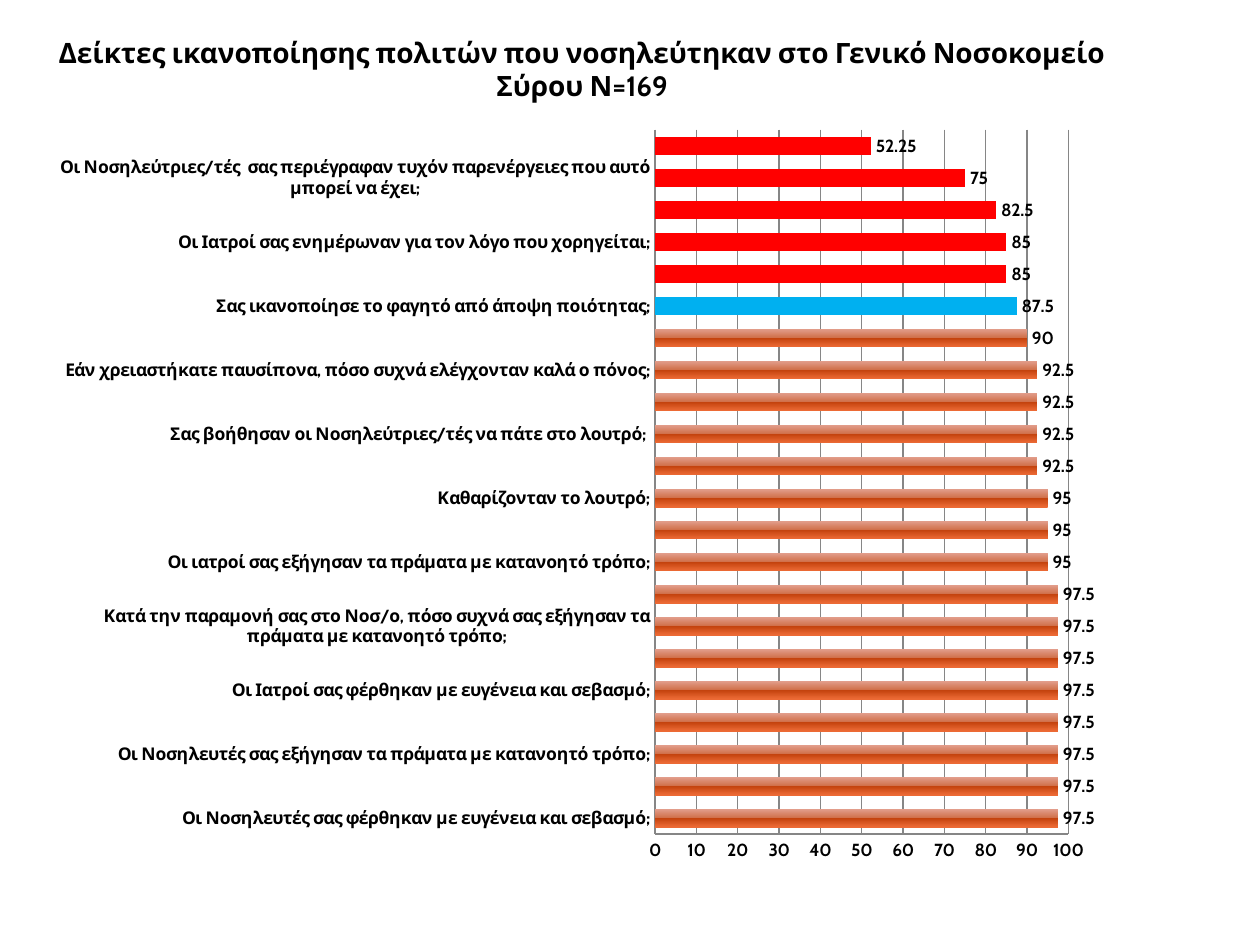
from lxml.etree import SubElement
from pptx import Presentation
from pptx.chart.data import CategoryChartData
from pptx.dml.color import RGBColor
from pptx.enum.chart import XL_CHART_TYPE, XL_LABEL_POSITION, XL_TICK_MARK
from pptx.enum.text import MSO_AUTO_SIZE, PP_ALIGN
from pptx.oxml.ns import qn
from pptx.util import Inches, Pt

FONT = "Cabin"
BLACK = RGBColor(0x00, 0x00, 0x00)
GRAY = RGBColor(0x86, 0x86, 0x86)
RED = RGBColor(0xFF, 0x00, 0x00)
BLUE = RGBColor(0x00, 0xB0, 0xF0)
ORANGE_STOPS = (
    (0, RGBColor(0xE3, 0xA0, 0x8F)),
    (50, RGBColor(0xD0, 0x70, 0x4A)),
    (50, RGBColor(0xC2, 0x41, 0x0C)),
    (100, RGBColor(0xEC, 0x6A, 0x35)),
)

TITLE = "Δείκτες ικανοποίησης πολιτών που νοσηλεύτηκαν στο Γενικό Νοσοκομείο Σύρου Ν=169"
TITLE_BOX = (0.23, 0.23, 8.78, 0.64)
CHART_BOX = (0.31, 0.92, 8.47, 6.04)
PLOT_BOX = (5.2, 1.03, 3.28, 5.59)
BLUE_LIMIT, RED_LIMIT = 87.5, 85

SATISFACTION = (
    ("Οι Νοσηλευτές σας φέρθηκαν με ευγένεια και σεβασμό;", 97.5),
    ("Οι Νοσηλευτές σας άκουσαν με προσοχή;", 97.5),
    ("Οι Νοσηλευτές σας εξήγησαν τα πράματα με κατανοητό τρόπο;", 97.5),
    ("Αφού είχατε πατήσει το κουμπί κλήσης για βοήθεια, πόσο συχνά λάβατε βοήθεια έγκαιρα;", 97.5),
    ("Οι Ιατροί σας φέρθηκαν με ευγένεια και σεβασμό;", 97.5),
    ("Οι Ιατροί σας άκουσαν με προσοχή;", 97.5),
    ("Κατά την παραμονή σας στο Νοσ/ο, πόσο συχνά σας εξήγησαν τα πράματα με κατανοητό τρόπο;", 97.5),
    ("Το προσωπικό έκανε ότι μπορούσε προκειμένου να σας βοηθήσει στην αντιμετώπιση του πόνου;", 97.5),
    ("Οι ιατροί σας εξήγησαν τα πράματα με κατανοητό τρόπο;", 95),
    ("Καθαρίζονταν το δωμάτιο νοσηλείας;", 95),
    ("Καθαρίζονταν το λουτρό;", 95),
    ("Σας ικανοποίησε το φαγητό από άποψη ποσότητας;", 92.5),
    ("Σας βοήθησαν οι Νοσηλεύτριες/τές να πάτε στο λουτρό; ", 92.5),
    ("Οι Νοσηλεύτριες/τές  ήταν πρόθυμες να σας βοηθήσουν να χρησιμοποιήσετε το ουροδοχείο;", 92.5),
    ("Εάν χρειαστήκατε παυσίπονα, πόσο συχνά ελέγχονταν καλά ο πόνος;", 92.5),
    ("Υπήρχε ησυχία τη νύχτα γύρω από το δωμάτιό σας;", 90),
    ("Σας ικανοποίησε το φαγητό από άποψη ποιότητας;", 87.5),
    ("Οι Νοσηλευτές/τριες σας ενημέρωναν για τον λόγο που χορηγείται;", 85),
    ("Οι Ιατροί σας ενημέρωναν για τον λόγο που χορηγείται;", 85),
    ("Σας ικανοποίησε η ποικιλία του μενού;", 82.5),
    ("Οι Νοσηλεύτριες/τές  σας περιέγραφαν τυχόν παρενέργειες που αυτό μπορεί να έχει;", 75),
    ("Οι Ιατροί σας περιέγραφαν τυχόν παρενέργειες που αυτό μπορεί να έχει;", 52.25),
)


def style_font(font, size):
    """Apply the bold black slide font."""
    font.name, font.size, font.bold = FONT, Pt(size), True
    font.color.rgb = BLACK


def add_title(slide):
    """Add the centred heading."""
    frame = slide.shapes.add_textbox(*map(Inches, TITLE_BOX)).text_frame
    frame.word_wrap = True
    frame.auto_size = MSO_AUTO_SIZE.SHAPE_TO_FIT_TEXT
    frame.text = TITLE
    heading = frame.paragraphs[0]
    heading.alignment = PP_ALIGN.CENTER
    style_font(heading.runs[0].font, 16)


def place_plot(chart):
    """Fix the inner plot area at PLOT_BOX within the chart."""
    plot_area = chart.plots[0]._element.getparent()
    layout = plot_area.find(qn("c:layout"))
    if layout is None:
        layout = SubElement(plot_area, qn("c:layout"))
        plot_area.insert(0, layout)
    manual = SubElement(layout, qn("c:manualLayout"))
    left, top, width, height = CHART_BOX
    x, y, plot_width, plot_height = PLOT_BOX
    settings = (
        ("layoutTarget", "inner"), ("xMode", "edge"), ("yMode", "edge"),
        ("x", (x - left) / width), ("y", (y - top) / height),
        ("w", plot_width / width), ("h", plot_height / height),
    )
    for tag, value in settings:
        SubElement(manual, qn(f"c:{tag}")).set("val", str(value))


def fill_glossy(fill, series):
    """Fill the bars with the glossy orange gradient, from top to bottom."""
    fill.gradient()
    fill.gradient_angle = 270
    stops = next(series._element.iter(qn("a:gsLst")))
    for stop in list(stops):
        stops.remove(stop)
    for percent, color in ORANGE_STOPS:
        stop = SubElement(stops, qn("a:gs"))
        stop.set("pos", str(percent * 1000))
        SubElement(stop, qn("a:srgbClr")).set("val", str(color))


def color_bars(series):
    """Mark the low scores in blue and red against the glossy bars."""
    series.invert_if_negative = False
    fill_glossy(series.format.fill, series)
    for index, (_, score) in enumerate(SATISFACTION):
        if score <= BLUE_LIMIT:
            fill = series.points[index].format.fill
            fill.solid()
            fill.fore_color.rgb = RED if score <= RED_LIMIT else BLUE


def style_axis(axis):
    """Give an axis a thin gray line and no tick marks."""
    axis.major_tick_mark = axis.minor_tick_mark = XL_TICK_MARK.NONE
    axis.format.line.color.rgb = GRAY
    axis.format.line.width = Pt(0.75)
    style_font(axis.tick_labels.font, 10)


def add_satisfaction_chart(slide):
    """Add the bar chart of satisfaction scores."""
    data = CategoryChartData()
    questions, scores = zip(*SATISFACTION)
    data.categories = questions
    data.add_series("Series 1", scores)
    chart = slide.shapes.add_chart(
        XL_CHART_TYPE.BAR_CLUSTERED, *map(Inches, CHART_BOX), data).chart
    chart.has_legend = chart.has_title = False
    style_font(chart.font, 10)
    place_plot(chart)

    plot = chart.plots[0]
    plot.vary_by_categories = False
    plot.gap_width, plot.overlap = 75, -25
    color_bars(plot.series[0])
    plot.has_data_labels = True
    plot.data_labels.show_value = True
    plot.data_labels.position = XL_LABEL_POSITION.OUTSIDE_END
    style_font(plot.data_labels.font, 10)

    style_axis(chart.category_axis)
    scale = chart.value_axis
    style_axis(scale)
    scale.minimum_scale, scale.maximum_scale, scale.major_unit = 0, 100, 10
    scale.has_major_gridlines = True
    scale.major_gridlines.format.line.color.rgb = GRAY
    scale.major_gridlines.format.line.width = Pt(0.75)


def main():
    """Build and save the slide."""
    deck = Presentation()
    deck.slide_width, deck.slide_height = Inches(10), Inches(7.5)
    slide = deck.slides.add_slide(deck.slide_layouts[6])
    add_title(slide)
    add_satisfaction_chart(slide)
    deck.save("out.pptx")


if __name__ == "__main__":
    main()
